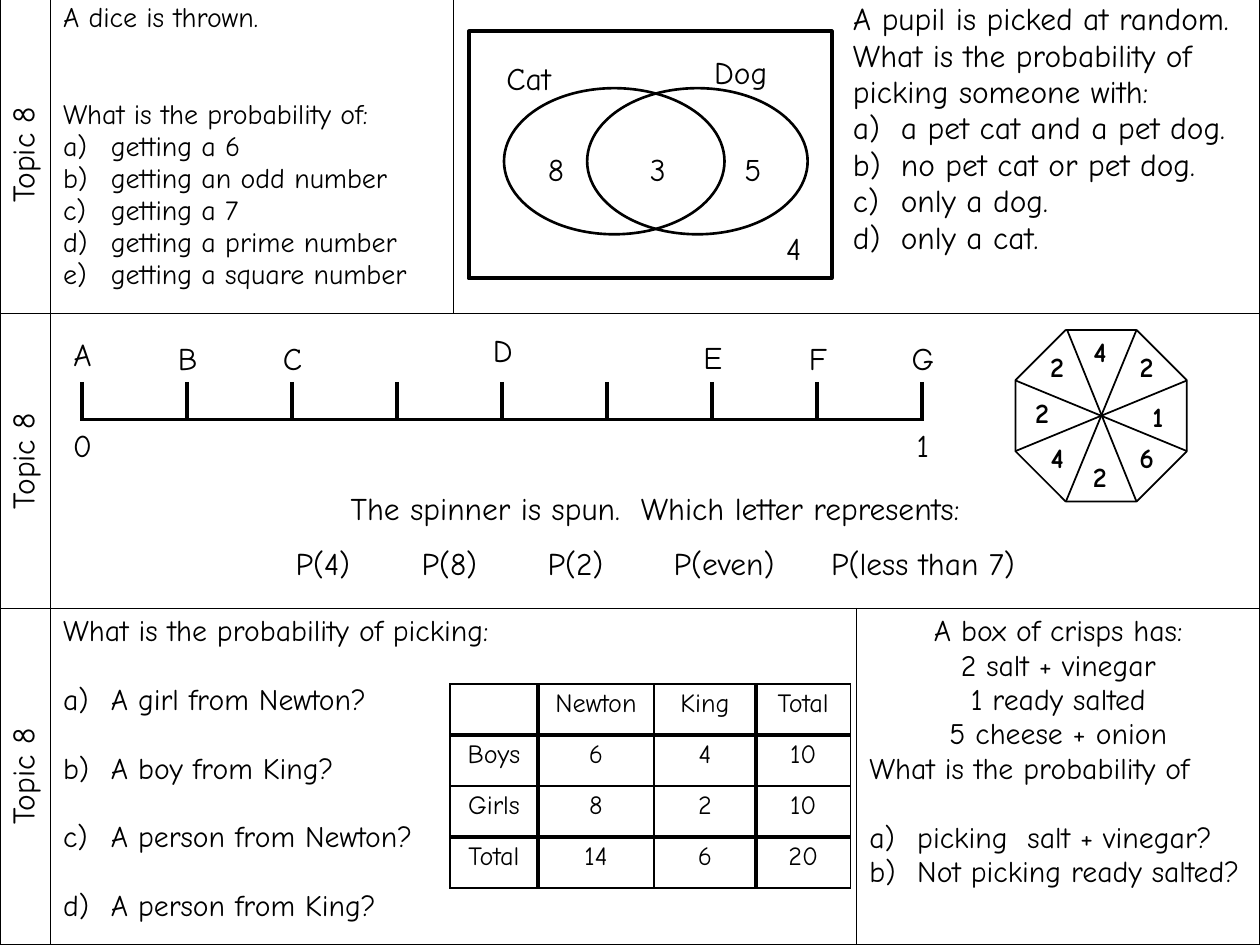
from lxml.etree import SubElement
from pptx import Presentation
from pptx.dml.color import RGBColor
from pptx.enum.shapes import MSO_CONNECTOR, MSO_SHAPE
from pptx.enum.text import PP_ALIGN
from pptx.oxml.ns import qn
from pptx.util import Inches, Pt

COLORS = {"ink": "000000", "paper": "FFFFFF"}
INK = RGBColor.from_string(COLORS["ink"])
FONT = "Comic Neue"
NO_STYLE = "{2D5ABB26-0587-4C30-8999-92F81FD0307C}"
LEFT, CENTER, ITEM = "left", "center", "item"


def write(tf, lines, size, bold=False):
    """Fill a text frame with (kind, text, space before in points) lines."""
    for i, (kind, text, gap) in enumerate(lines):
        p = tf.paragraphs[0] if i == 0 else tf.add_paragraph()
        p.text = text
        p.alignment = PP_ALIGN.CENTER if kind == CENTER else PP_ALIGN.LEFT
        if gap:
            p.space_before = Pt(gap)
        pPr = p._p.get_or_add_pPr()
        if kind == ITEM:
            pPr.set("marL", str(Inches(0.38)))
            pPr.set("indent", str(-Inches(0.38)))
            SubElement(pPr, qn("a:buAutoNum"), type="alphaLcParenR")
        if "\t" in text:
            tabs = SubElement(pPr, qn("a:tabLst"))
            for pos in (1, 2, 3, 4.25):
                SubElement(tabs, qn("a:tab"), pos=str(Inches(pos)), algn="l")
        for r in p.runs:
            r.font.name = FONT
            r.font.size = Pt(size)
            r.font.bold = bold
            r.font.color.rgb = INK


def set_borders(cell, left, right, top, bottom):
    """Draw cell edges of the given widths in points; 0 means no line."""
    tcPr = cell._tc.get_or_add_tcPr()
    for tag, width in zip(("lnL", "lnR", "lnT", "lnB"), (left, right, top, bottom)):
        ln = SubElement(tcPr, qn("a:" + tag), w=str(Pt(width)))
        if width:
            fill = SubElement(ln, qn("a:solidFill"))
            SubElement(fill, qn("a:srgbClr"), val=COLORS["ink"])
        else:
            SubElement(ln, qn("a:noFill"))


prs = Presentation()
prs.slide_width, prs.slide_height = Inches(10), Inches(7.5)
s = prs.slides.add_slide(prs.slide_layouts[6])

# Tables: page grid, probability scale, two-way table
tables = []
for x, y, cols, rows in [
    (0, -0.03, [0.4, 3.2, 3.07, 0.13, 3.2], [2.52, 2.34, 2.67]),
    (0.65, 3.03, [6.67 / 8] * 8, [0.3]),
    (3.57, 5.43, [0.7, 0.92, 0.81, 0.75], [1.62 / 4] * 4),
]:
    frame = s.shapes.add_table(len(rows), len(cols), Inches(x), Inches(y),
                               Inches(sum(cols)), Inches(sum(rows)))
    t = frame.table
    t.first_row = t.horz_banding = False
    t._tbl.tblPr.find(qn("a:tableStyleId")).text = NO_STYLE
    for col, width in zip(t.columns, cols):
        col.width = Inches(width)
    for row, height in zip(t.rows, rows):
        row.height = Inches(height)
    tables.append(t)
grid, scale, two_way = tables

# Page grid
for row in range(3):
    for col in range(5):
        cell = grid.cell(row, col)
        set_borders(cell, 0 if (row, col) == (0, 3) else 1,
                    0 if (row, col) == (0, 2) else 1, 1, 1)
        cell.fill.background()
    topic = grid.cell(row, 0)
    topic._tc.get_or_add_tcPr().set("vert", "vert270")
    write(topic.text_frame, [(CENTER, "Topic 8", 0)], 18)
for start, end in [((0, 3), (0, 4)), ((1, 1), (1, 4)), ((2, 1), (2, 3))]:
    grid.cell(*start).merge(grid.cell(*end))
grid.cell(1, 1).margin_top = Inches(1.42)

questions = [
    (0, 1, 16, [
        (LEFT, "A dice is thrown.", 0),
        (LEFT, "What is the probability of:", 36.8),
        (ITEM, "getting a 6", 0),
        (ITEM, "getting an odd number", 0),
        (ITEM, "getting a 7", 0),
        (ITEM, "getting a prime number", 0),
        (ITEM, "getting a square number", 0)]),
    (0, 3, 18, [
        (LEFT, "A pupil is picked at random.", 0),
        (LEFT, "What is the probability of picking someone with:", 0),
        (ITEM, "a pet cat and a pet dog.", 0),
        (ITEM, "no pet cat or pet dog.", 0),
        (ITEM, "only a dog.", 0),
        (ITEM, "only a cat.", 0)]),
    (1, 1, 18, [
        (CENTER, "The spinner is spun.  Which letter represents:", 0),
        (CENTER, "P(4)\tP(8)\tP(2)\tP(even)\tP(less than 7)", 10.3)]),
    (2, 1, 17, [
        (LEFT, "What is the probability of picking:", 0),
        (ITEM, "A girl from Newton?", 19.6),
        (ITEM, "A boy from King?", 19.6),
        (ITEM, "A person from Newton?", 19.6),
        (ITEM, "A person from King?", 19.6)]),
    (2, 4, 17, [
        (CENTER, "A box of crisps has:", 0),
        (CENTER, "2 salt + vinegar", 0),
        (CENTER, "1 ready salted", 0),
        (CENTER, "5 cheese + onion", 0),
        (LEFT, "What is the probability of", 0),
        (ITEM, "picking  salt + vinegar?", 19.6),
        (ITEM, "Not picking ready salted?", 0)]),
]
for row, col, size, lines in questions:
    write(grid.cell(row, col).text_frame, lines, size)

# Probability scale
for cell in scale.iter_cells():
    set_borders(cell, 2.25, 2.25, 0, 2.25)
    cell.fill.background()
    cell.margin_top = cell.margin_bottom = 0
    cell.text_frame.paragraphs[0]._p.get_or_add_endParaRPr().set("sz", "800")

# Two-way table, with thick rules around headings and totals
data = [["", "Newton", "King", "Total"],
        ["Boys", "6", "4", "10"],
        ["Girls", "8", "2", "10"],
        ["Total", "14", "6", "20"]]
edges = [1, 3, 1, 3, 1]
for row, values in enumerate(data):
    for col, value in enumerate(values):
        cell = two_way.cell(row, col)
        set_borders(cell, edges[col], edges[col + 1], edges[row], edges[row + 1])
        cell.fill.solid()
        cell.fill.fore_color.rgb = RGBColor.from_string(COLORS["paper"])
        cell.margin_left = cell.margin_right = Inches(0.04)
        cell.margin_top = cell.margin_bottom = Inches(0.04)
        write(cell.text_frame, [(CENTER, value, 0)], 15)

# Spinner octagon and Venn diagram outlines
for kind, x, y, w, h, weight in [
    (MSO_SHAPE.OCTAGON, 8.06, 2.62, 1.36, 1.36, 1),
    (MSO_SHAPE.RECTANGLE, 3.72, 0.25, 2.88, 1.96, 2.25),
    (MSO_SHAPE.OVAL, 4, 0.7, 1.75, 1.16, 1.5),
    (MSO_SHAPE.OVAL, 4.66, 0.7, 1.75, 1.16, 1.5),
]:
    sp = s.shapes.add_shape(kind, Inches(x), Inches(y), Inches(w), Inches(h))
    sp.shadow.inherit = False
    sp.fill.background()
    sp.line.color.rgb = INK
    sp.line.width = Pt(weight)

# Spinner diagonals
for x1, y1, x2, y2 in [(8.47, 2.62, 9.02, 3.98), (8.06, 3.02, 9.42, 3.58),
                       (8.06, 3.58, 9.42, 3.02), (9.02, 2.62, 8.46, 3.98)]:
    line = s.shapes.add_connector(MSO_CONNECTOR.STRAIGHT, Inches(x1), Inches(y1),
                                  Inches(x2), Inches(y2))
    line.line.color.rgb = INK
    line.line.width = Pt(1)
    SubElement(line._element.spPr, qn("a:effectLst"))

# Labels: text, left, top, width, height, alignment, size, bold
labels = [(text, 0.35 + tick * 6.67 / 8, y, 0.61, 0.4, CENTER, 18, False)
          for text, tick, y in [
              ("0", 0, 3.33), ("1", 8, 3.33), ("A", 0, 2.61), ("B", 1, 2.64),
              ("C", 2, 2.64), ("D", 4, 2.58), ("E", 6, 2.63), ("F", 7, 2.64),
              ("G", 8, 2.64)]]
labels += [(text, x, y, 0.6, 0.48, CENTER, 16, True)
           for text, x, y in [
               ("4", 8.43, 2.59), ("2", 8.8, 2.71), ("1", 8.89, 3.1), ("6", 8.8, 3.43),
               ("2", 8.43, 3.58), ("4", 8.09, 3.43), ("2", 7.97, 3.07), ("2", 8.09, 2.71)]]
labels += [(text, x, y, w, 0.4, LEFT, 18, False)
           for text, x, y, w in [
               ("Cat", 3.92, 0.42, 1.46), ("Dog", 5.57, 0.37, 1.03), ("3", 5.06, 1.14, 0.4),
               ("8", 4.25, 1.14, 0.4), ("5", 5.81, 1.14, 0.4), ("4", 6.14, 1.77, 0.4)]]
for text, x, y, w, h, kind, size, bold in labels:
    tf = s.shapes.add_textbox(Inches(x), Inches(y), Inches(w), Inches(h)).text_frame
    tf.word_wrap = True
    write(tf, [(kind, text, 0)], size, bold)
    if bold:
        tf.paragraphs[0].line_spacing = 1.07

prs.save("out.pptx")
